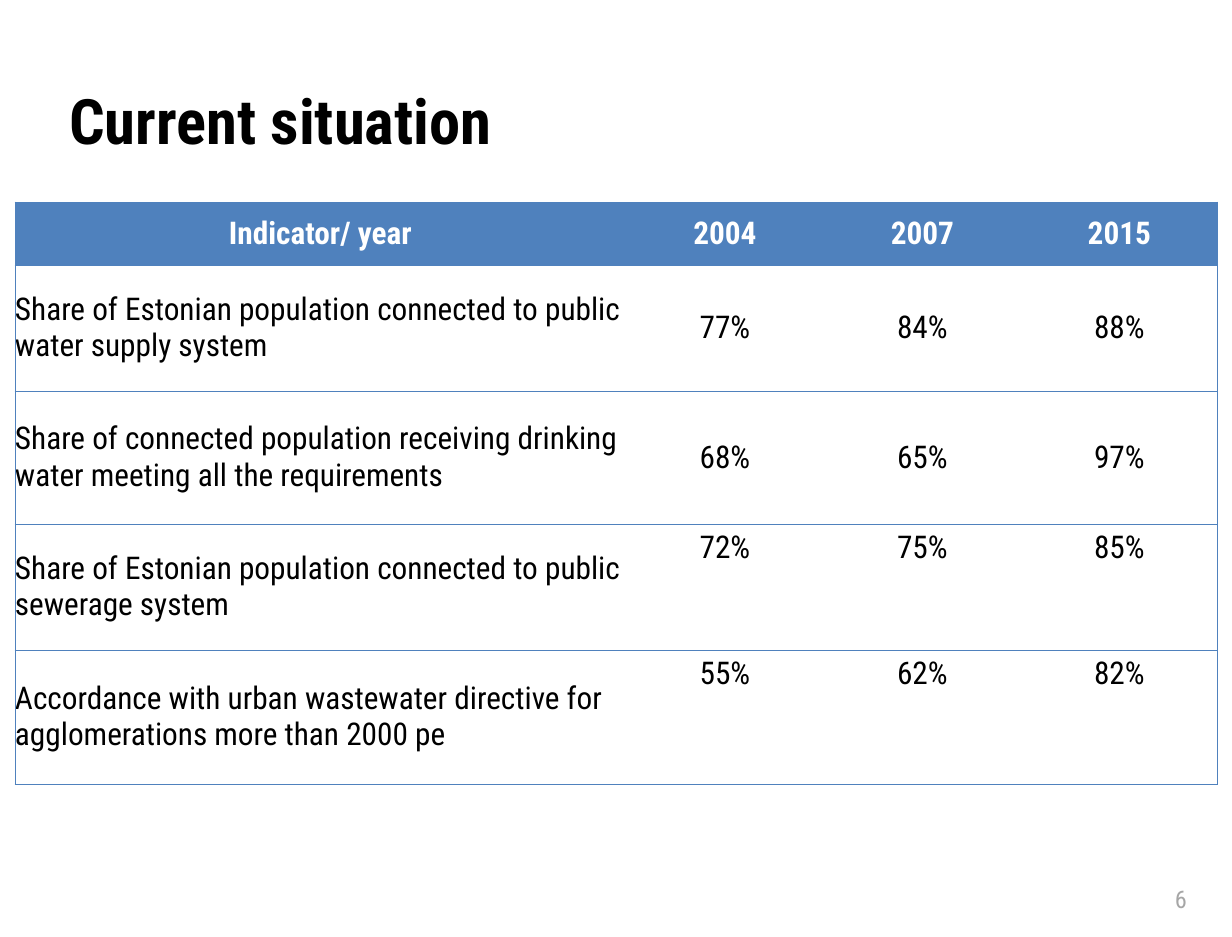
from lxml.etree import fromstring
from pptx import Presentation
from pptx.dml.color import RGBColor
from pptx.enum.text import MSO_ANCHOR, MSO_AUTO_SIZE, PP_ALIGN
from pptx.util import Pt

HEADING = "Current situation"
PAGE_NUMBER = "6"
INDICATORS = [
    ("Indicator/ year", "2004", "2007", "2015"),
    ("Share of Estonian population connected to public water supply system", "77%", "84%", "88%"),
    ("Share of connected population receiving drinking water meeting all the requirements", "68%", "65%", "97%"),
    ("Share of Estonian population connected to public sewerage system", "72%", "75%", "85%"),
    ("Accordance with urban wastewater directive for agglomerations more than 2000 pe", "55%", "62%", "82%"),
]
COLUMN_WIDTHS = [611, 198, 197, 197]
ROW_HEIGHTS = [63, 126, 133, 126, 134]
FIRST_TOP_ALIGNED_ROW = 3
FONT = "Roboto Condensed"
BLUE, BLACK, WHITE, GREY = "4F81BD", "000000", "FFFFFF", "A6A6A6"
EMU_PER_PX = 914400 / 125.2
DRAWING_NS = "http://schemas.openxmlformats.org/drawingml/2006/main"


def px(length):
    return round(length * EMU_PER_PX)


def color(value):
    return RGBColor.from_string(value)


def write(frame, words, size, ink, bold=False, align=PP_ALIGN.LEFT, spacing=1.0):
    paragraph = frame.paragraphs[0]
    paragraph.alignment = align
    paragraph.line_spacing = spacing
    run = paragraph.add_run()
    run.text = words
    run.font.name = FONT
    run.font.size = Pt(size)
    run.font.bold = bold
    run.font.color.rgb = color(ink)


def place(shape, left, top, width, height):
    shape.left, shape.top, shape.width, shape.height = map(px, (left, top, width, height))
    frame = shape.text_frame
    frame.auto_size = MSO_AUTO_SIZE.NONE
    frame.word_wrap = True
    frame.margin_left = frame.margin_top = frame.margin_right = frame.margin_bottom = 0
    return frame


def set_borders(cell, visible_sides):
    properties = cell._tc.get_or_add_tcPr()
    for position, side in enumerate("LRTB"):
        paint = f'<a:solidFill><a:srgbClr val="{BLUE}"/></a:solidFill>' if side in visible_sides else "<a:noFill/>"
        border = fromstring(f'<a:ln{side} xmlns:a="{DRAWING_NS}" w="{Pt(0.5)}">{paint}</a:ln{side}>')
        properties.insert(position, border)


def fill_cell(cell, words, row, column):
    header = row == 0
    top_aligned = row >= FIRST_TOP_ALIGNED_ROW and column > 0
    margin_x, margin_y = (px(13), px(6)) if top_aligned else (0, 0)
    cell.margin_left = cell.margin_right = margin_x
    cell.margin_top = cell.margin_bottom = margin_y
    cell.vertical_anchor = MSO_ANCHOR.TOP if top_aligned else MSO_ANCHOR.MIDDLE
    if header:
        cell.fill.solid()
        cell.fill.fore_color.rgb = color(BLUE)
    else:
        cell.fill.background()
    align = PP_ALIGN.CENTER if header or column else PP_ALIGN.LEFT
    write(cell.text_frame, words, 18, WHITE if header else BLACK, header, align)
    outer_side = {0: "L", len(COLUMN_WIDTHS) - 1: "R"}.get(column, "")
    set_borders(cell, "TB" + outer_side)


def main():
    deck = Presentation()
    deck.slide_width, deck.slide_height = px(1232), px(937)
    slide = deck.slides.add_slide(deck.slide_layouts[5])

    heading = place(slide.shapes.title, 69, 41, 1119, 173)
    heading.vertical_anchor = MSO_ANCHOR.MIDDLE
    write(heading, HEADING, 36, BLACK, True, spacing=0.77)

    page_number = place(slide.shapes.add_textbox(0, 0, 0, 0), 901, 886, 286, 35)
    write(page_number, PAGE_NUMBER, 14, GREY, align=PP_ALIGN.RIGHT, spacing=0.95)

    table = slide.shapes.add_table(
        len(INDICATORS), len(COLUMN_WIDTHS),
        px(15), px(202), px(sum(COLUMN_WIDTHS)), px(sum(ROW_HEIGHTS)),
    ).table
    table.first_row = table.horz_banding = False
    for column, width in zip(table.columns, COLUMN_WIDTHS):
        column.width = px(width)
    for row, height in zip(table.rows, ROW_HEIGHTS):
        row.height = px(height)
    for row, entries in enumerate(INDICATORS):
        for column, words in enumerate(entries):
            fill_cell(table.cell(row, column), words, row, column)

    deck.save("out.pptx")


if __name__ == "__main__":
    main()
